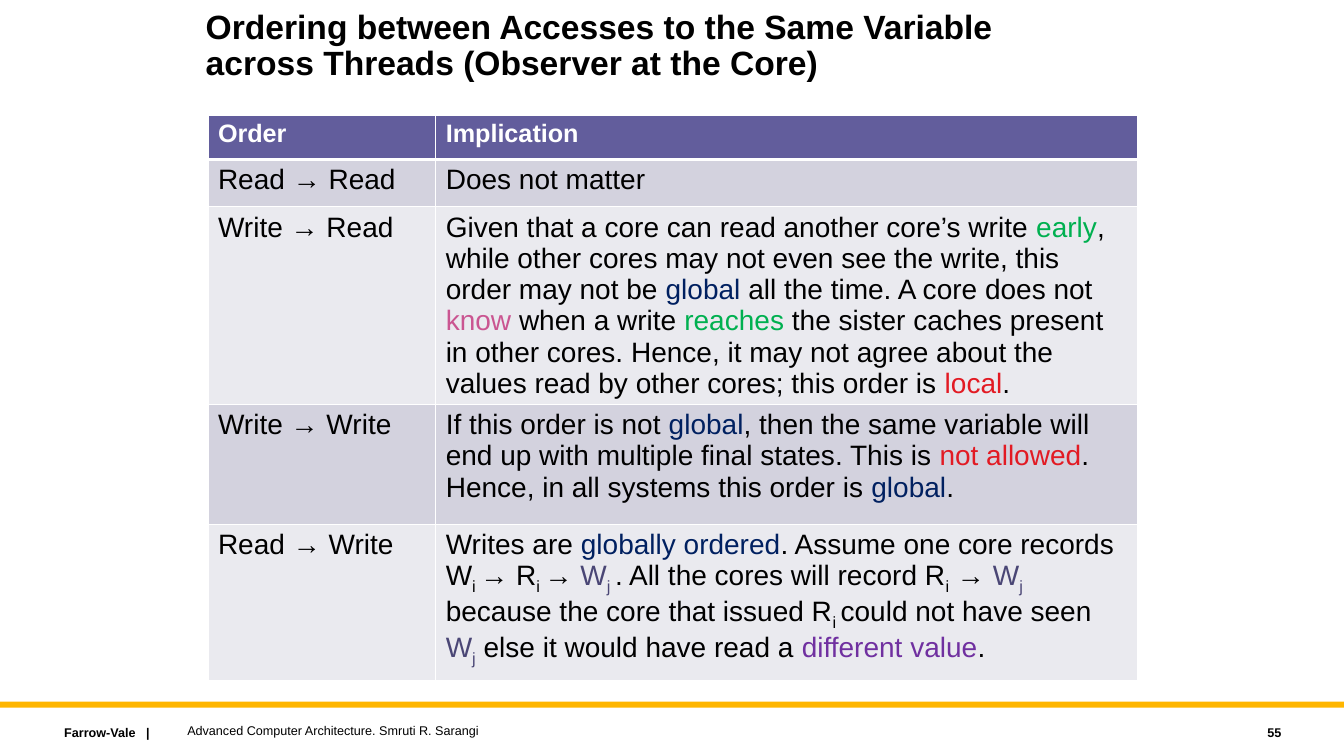
from dataclasses import dataclass
from typing import NamedTuple

from lxml import etree
from pptx import Presentation, util as u
from pptx.dml.color import RGBColor
from pptx.enum import shapes, text
from pptx.oxml.ns import qn

COLOURS = {
    "black": "000000", "white": "FFFFFF", "gold": "FFB600",
    "header": "625D9C", "band": "D3D2DE", "pale": "EAEAEF",
    "green": "00B050", "navy": "002060", "pink": "CA5591",
    "red": "E21A23", "violet": "4A4675", "purple": "7030A0",
}


class Run(NamedTuple):
    text: str
    colour: str = "black"
    sub: bool = False


@dataclass
class Row:
    height: float
    fill: str
    order: str
    implication: list[Run]


@dataclass
class Label:
    text: str
    box: tuple[float, float, float, float]
    bold: bool = False
    align: text.PP_ALIGN = text.PP_ALIGN.LEFT


GLOBAL = Run("global", "navy")
W = Run("W", "violet")
J = Run("j ", "violet", True)
I = Run("i ", sub=True)

ROWS = [
    Row(1.12, "header", "Order", [Run("Implication", "white")]),
    Row(1.19, "band", "Read → Read", [Run("Does not matter")]),
    Row(4.85, "pale", "Write → Read", [
        Run("Given that a core can read another core’s write "), Run("early", "green"),
        Run(", while other cores may not even see the write, this order may not be "),
        GLOBAL, Run(" all the time. A core does not "), Run("know", "pink"),
        Run(" when a write "), Run("reaches", "green"),
        Run(" the sister caches present in other cores. Hence, it may not agree "
            "about the values read by other cores; this order is "),
        Run("local", "red"), Run("."),
    ]),
    Row(3.02, "band", "Write → Write", [
        Run("If this order is not "), GLOBAL,
        Run(", then the same variable will end up with multiple final states. This is "),
        Run("not allowed", "red"), Run(". Hence, in all systems this order is "),
        GLOBAL, Run("."),
    ]),
    Row(3.94, "pale", "Read → Write", [
        Run("Writes are "), Run("globally ordered", "navy"),
        Run(". Assume one core records W"), I, Run("→ R"), I, Run("→ "), W, J,
        Run(". All the cores will record R"), Run("i", sub=True), Run(" → "), W, J,
        Run("because the core that issued R"), I, Run("could not have seen "),
        W, Run("j", "violet", True), Run(" else it would have read a "),
        Run("different value", "purple"), Run("."),
    ]),
]

LABELS = [
    Label("Farrow-Vale   |", (1.37, 18.14, 5.77, 0.64), bold=True),
    Label("Advanced Computer Architecture. Smruti R. Sarangi", (4.47, 18.08, 20.32, 0.64)),
    Label("55", (28.98, 18.14, 3.56, 0.64), bold=True, align=text.PP_ALIGN.RIGHT),
]


def rgb(name: str) -> RGBColor:
    return RGBColor.from_string(COLOURS[name])


def apply(target, formats: dict) -> None:
    for name, value in formats.items():
        setattr(target, name, value)


def place(sp, box: tuple[float, float, float, float]) -> None:
    apply(sp, dict(zip(("left", "top", "width", "height"), map(u.Cm, box))))


def write(p, runs: list[Run], size: float, bold: bool = False) -> None:
    for run in runs:
        r = p.add_run()
        r.text = run.text
        apply(r.font, {"name": "Arial", "size": u.Pt(size), "bold": bold})
        r.font.color.rgb = rgb(run.colour)
        if run.sub:
            r._r.get_or_add_rPr().set("baseline", "-25000")


def add_borders(cell, bottom: float, top: float) -> None:
    tcPr = cell._tc.get_or_add_tcPr()
    for side, width in (("lnL", 1), ("lnR", 1), ("lnT", top), ("lnB", bottom)):
        ln = etree.SubElement(tcPr, qn(f"a:{side}"), w=str(u.Pt(width)))
        fill = etree.SubElement(ln, qn("a:solidFill"))
        etree.SubElement(fill, qn("a:srgbClr"), val=COLOURS["white"])


def add_title(s) -> None:
    sp = s.shapes.title
    place(sp, (4.93, 0.13, 22.38, 2.29))
    tf = sp.text_frame
    apply(tf, {"word_wrap": True, "auto_size": text.MSO_AUTO_SIZE.NONE,
               "vertical_anchor": text.MSO_ANCHOR.TOP})
    p = tf.paragraphs[0]
    apply(p, {"alignment": text.PP_ALIGN.LEFT, "line_spacing": 0.9})
    write(p, [Run("Ordering between Accesses to the Same Variable across Threads "
                  "(Observer at the Core)")], 24, True)


def add_order_table(s) -> None:
    table = s.shapes.add_table(len(ROWS), 2, u.Cm(5.24), u.Cm(2.9),
                               u.Cm(23.42), u.Cm(14.12)).table
    for column, width in zip(table.columns, (5.74, 17.68)):
        column.width = u.Cm(width)
    for i, row in enumerate(ROWS):
        table.rows[i].height = u.Cm(row.height)
        head = i == 0
        order = [Run(row.order, "white" if head else "black")]
        for j, runs in enumerate((order, row.implication)):
            cell = table.cell(i, j)
            add_borders(cell, bottom=3 if head else 1, top=3 if i == 1 else 1)
            cell.fill.solid()
            cell.fill.fore_color.rgb = rgb(row.fill)
            write(cell.text_frame.paragraphs[0], runs, 18 if head else 20, head)


def add_footer(s) -> None:
    sp = s.shapes.add_shape(shapes.MSO_SHAPE.RECTANGLE, 0, u.Cm(17.68), u.Cm(33.87), u.Cm(0.15))
    sp.shadow.inherit = False
    sp.fill.solid()
    sp.fill.fore_color.rgb = rgb("gold")
    sp.line.fill.background()
    for label in LABELS:
        sp = s.shapes.add_textbox(*map(u.Cm, label.box))
        tf = sp.text_frame
        apply(tf, {"word_wrap": True, "vertical_anchor": text.MSO_ANCHOR.MIDDLE})
        p = tf.paragraphs[0]
        p.alignment = label.align
        write(p, [Run(label.text)], 9, label.bold)


def main() -> None:
    prs = Presentation()
    apply(prs, {"slide_width": u.Cm(33.87), "slide_height": u.Cm(19.05)})
    s = prs.slides.add_slide(prs.slide_layouts[5])  # title only
    add_title(s)
    add_order_table(s)
    add_footer(s)
    prs.save("out.pptx")


if __name__ == "__main__":
    main()
